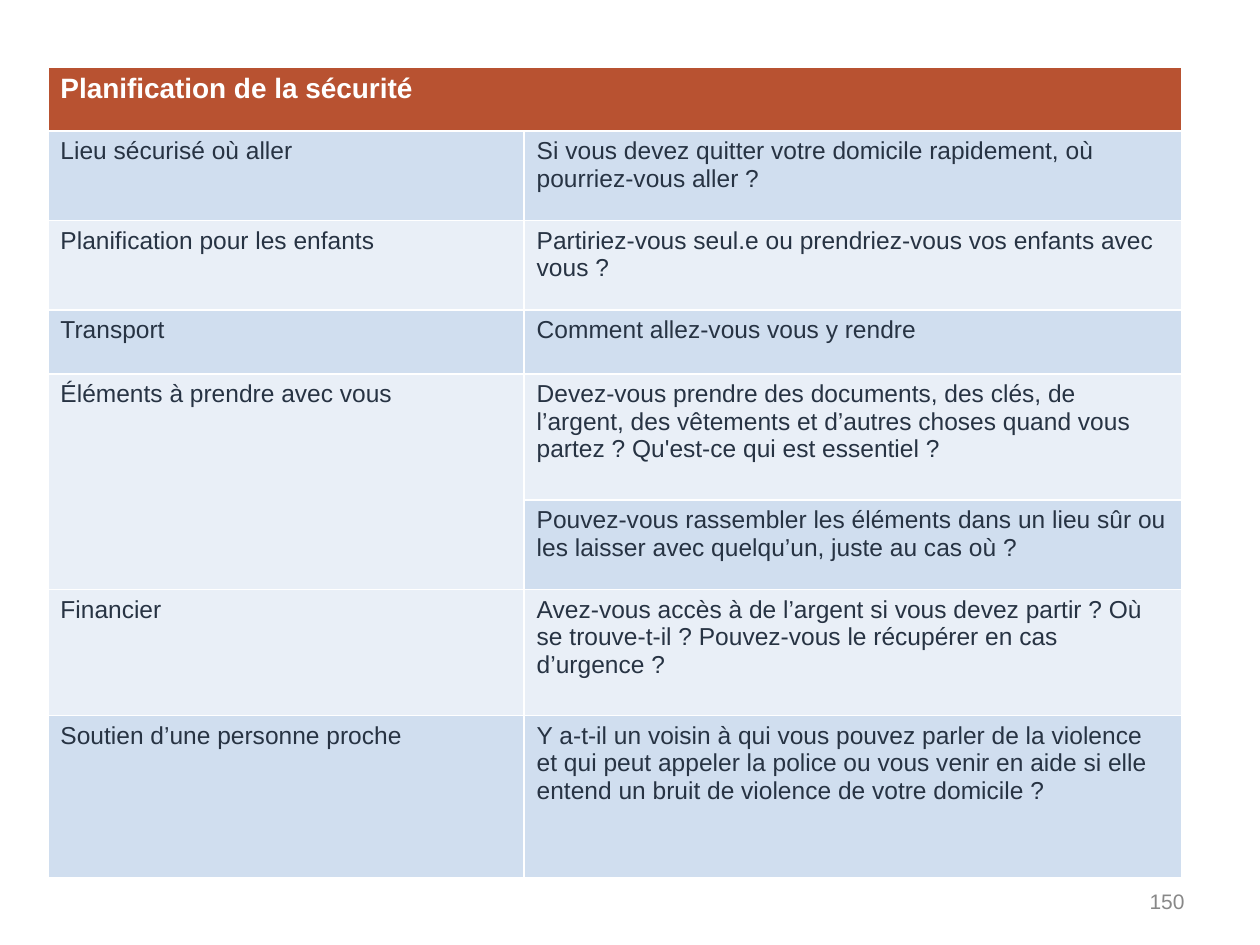
"""Build the safety planning table slide."""
import pptx
import pptx.util
import pptx.dml.color
import pptx.enum.text

Inches = pptx.util.Inches

TITLE = "Planification de la sécurité"
ROWS = [
    ("Lieu sécurisé où aller",
     "Si vous devez quitter votre domicile rapidement, où pourriez-vous aller ?", 0.71),
    ("Planification pour les enfants",
     "Partiriez-vous seul.e ou prendriez-vous vos enfants avec vous ?", 0.71),
    ("Transport", "Comment allez-vous vous y rendre", 0.51),
    ("Éléments à prendre avec vous",
     "Devez-vous prendre des documents, des clés, de l’argent, des vêtements et "
     "d’autres choses quand vous partez ? Qu'est-ce qui est essentiel ?", 1),
    ("",
     "Pouvez-vous rassembler les éléments dans un lieu sûr ou les laisser avec "
     "quelqu’un, juste au cas où ?", 0.71),
    ("Financier",
     "Avez-vous accès à de l’argent si vous devez partir ? Où se trouve-t-il ? "
     "Pouvez-vous le récupérer en cas d’urgence ?", 1),
    ("Soutien d’une personne proche",
     "Y a-t-il un voisin à qui vous pouvez parler de la violence et qui peut appeler "
     "la police ou vous venir en aide si elle entend un bruit de violence de votre "
     "domicile ?", 1.29),
]
WIDTHS = [3.78, 5.22]
HEAD_H = 0.51
BANDS = ["D0DEEF", "E9EFF7"]
HEAD = {"size": pptx.util.Pt(16), "bold": True, "name": "Arial"}
BODY = {"size": pptx.util.Pt(14), "bold": False, "name": "Arial"}
PAGE = {"size": pptx.util.Pt(12), "name": "Arial"}


def rgb(code):
    """Turn a hex string into a colour."""
    return pptx.dml.color.RGBColor.from_string(code)


def write(frame, text, style, color):
    """Put styled text in a frame."""
    para = frame.paragraphs[0]
    run = para.add_run()
    run.text = text
    for key, value in style.items():
        setattr(run.font, key, value)
    run.font.color.rgb = rgb(color)
    return para


def paint(cell, color):
    """Fill a cell with one colour."""
    cell.fill.solid()
    cell.fill.fore_color.rgb = rgb(color)


def add_plan(slide):
    """Add the planning table."""
    heights = [HEAD_H] + [row[2] for row in ROWS]
    table = slide.shapes.add_table(
        len(heights), len(WIDTHS), Inches(0.38), Inches(0.53),
        Inches(sum(WIDTHS)), Inches(sum(heights))).table
    for col, width in zip(table.columns, WIDTHS):
        col.width = Inches(width)
    for row, height in zip(table.rows, heights):
        row.height = Inches(height)

    for cell in table.rows[0].cells:
        paint(cell, "B85231")
    table.cell(0, 0).merge(table.cell(0, 1))
    write(table.cell(0, 0).text_frame, TITLE, HEAD, "FFFFFF")

    for i, (topic, ask, _) in enumerate(ROWS, 1):
        for j, text in enumerate((topic, ask)):
            cell = table.cell(i, j)
            paint(cell, BANDS[(i - 1) % 2])
            if text:
                write(cell.text_frame, text, BODY, "273343")
            else:
                table.cell(i - 1, j).merge(cell)


def add_page(slide):
    """Add the page number."""
    box = slide.shapes.add_textbox(
        Inches(7.17), Inches(6.95), Inches(2.33), Inches(0.4))
    frame = box.text_frame
    frame.word_wrap = True
    frame.vertical_anchor = pptx.enum.text.MSO_ANCHOR.MIDDLE
    para = write(frame, "150", PAGE, "888888")
    para.alignment = pptx.enum.text.PP_ALIGN.RIGHT


def main():
    """Build and save the deck."""
    deck = pptx.Presentation()
    deck.slide_width, deck.slide_height = Inches(10), Inches(7.5)
    slide = deck.slides.add_slide(deck.slide_layouts[6])
    add_plan(slide)
    add_page(slide)
    deck.save("out.pptx")


if __name__ == "__main__":
    main()
